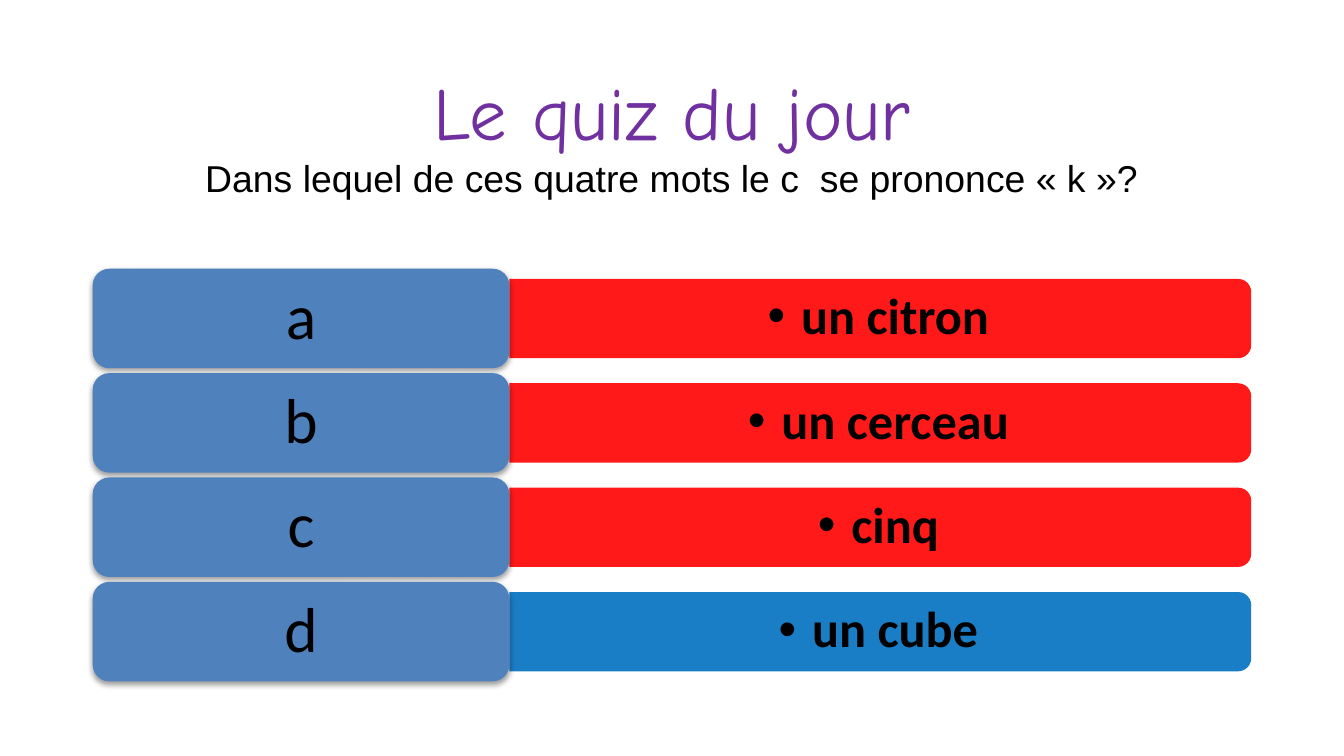
from lxml import etree
from pptx import Presentation
from pptx.dml.color import RGBColor
from pptx.enum.shapes import MSO_SHAPE
from pptx.enum.text import MSO_ANCHOR, PP_ALIGN
from pptx.oxml.ns import qn
from pptx.util import Inches, Pt

ROUND = MSO_SHAPE.ROUNDED_RECTANGLE
TAB = MSO_SHAPE.ROUND_2_SAME_RECTANGLE
MIDDLE = MSO_ANCHOR.MIDDLE
CENTER = PP_ALIGN.CENTER

TITLE = "Le quiz du jour"
QUESTION = "Dans lequel de ces quatre mots le c  se prononce « k »?"
ANSWERS = [
    ("a", "un citron", "wrong"),
    ("b", "un cerceau", "wrong"),
    ("c", "cinq", "wrong"),
    ("d", "un cube", "right"),
]

THEME = {
    "wrong": "FF0000",
    "right": "0070C0",
    "label": "4F81BD",
    "shadow": "000000",
    "bullet": "Arial",
    # text styles: font, size, colour, bold
    "title": ("Comic Neue", 40, "7030A0", False),
    "question": ("Arial", 20, "000000", False),
    "letter": ("Calibri", 34, "000000", False),
    "word": ("Calibri", 27, "000000", True),
}

WIDTH = Inches(10)
HEIGHT = WIDTH * 9 // 16
LEFT, TOP, LAST = 0.69, 2.0, 4.33
STEP = (LAST - TOP) / (len(ANSWERS) - 1)
LABEL_W, LABEL_H = 3.1, 0.74
BAR_W, BAR_H = 5.52, 0.59
PAD = 0.03


def style(run, name):
    font = run.font
    font.name, size, color, font.bold = THEME[name]
    font.size = Pt(size)
    font.color.rgb = RGBColor.from_string(color)


def add_text(slide, box, text, names, inset=(0.1, 0.05)):
    """Add centred text; names gives one style for each line."""
    frame = slide.shapes.add_textbox(*map(Inches, box)).text_frame
    frame.word_wrap = True
    frame.vertical_anchor = MIDDLE
    frame.margin_left = frame.margin_right = Inches(inset[0])
    frame.margin_top = frame.margin_bottom = Inches(inset[1])
    para = frame.paragraphs[0]
    para.text = text
    para.alignment = CENTER
    for run, name in zip(para.runs, names):
        style(run, name)
    return para


def add_block(slide, kind, box, color):
    shape = slide.shapes.add_shape(kind, *map(Inches, box))
    shape.shadow.inherit = False
    shape.fill.solid()
    shape.fill.fore_color.rgb = RGBColor.from_string(color)
    shape.line.fill.background()
    return shape


def set_alpha(color, percent):
    etree.SubElement(color, qn("a:alpha"), val=str(percent * 1000))


def add_shadow(shape):
    effects = shape._element.spPr.find(qn("a:effectLst"))
    outer = etree.SubElement(
        effects, qn("a:outerShdw"), blurRad=str(Pt(3.1)),
        dist=str(Pt(1.6)), dir="5400000", rotWithShape="0")
    color = etree.SubElement(outer, qn("a:srgbClr"), val=THEME["shadow"])
    set_alpha(color, 38)


def add_bullet(para):
    props = para._p.get_or_add_pPr()
    props.set("marL", str(Inches(0.25)))
    props.set("indent", str(Inches(-0.25)))
    etree.SubElement(props, qn("a:buFont"), typeface=THEME["bullet"])
    etree.SubElement(props, qn("a:buChar"), char="•")


def add_answer(slide, top, letter, word, state):
    mid = top + LABEL_H / 2
    start = LEFT + LABEL_W

    # The bar is a tall tab turned a quarter about its centre.
    bar = add_block(
        slide, TAB,
        (start + (BAR_W - BAR_H) / 2, mid - BAR_W / 2, BAR_H, BAR_W),
        THEME[state])
    bar.rotation = 90
    set_alpha(bar._element.spPr.find(".//" + qn("a:srgbClr")), 90)

    para = add_text(
        slide, (start, mid - BAR_H / 2 + PAD, BAR_W - PAD, BAR_H - 2 * PAD),
        word, ["word"], (0.11, 0.06))
    para.level = 1
    para.line_spacing = 0.9
    add_bullet(para)

    add_shadow(add_block(
        slide, ROUND, (LEFT, top, LABEL_W, LABEL_H), THEME["label"]))
    para = add_text(
        slide,
        (LEFT + PAD, top + PAD, LABEL_W - 2 * PAD, LABEL_H - 2 * PAD),
        letter, ["letter"], (0.14, 0.07))
    para.line_spacing = 0.9


def main():
    deck = Presentation()
    deck.slide_width, deck.slide_height = WIDTH, HEIGHT
    slide = deck.slides.add_slide(deck.slide_layouts[6])
    add_text(slide, (LEFT, 0.2, LABEL_W + BAR_W, 1.58),
             TITLE + "\v" + QUESTION, ["title", "question"])
    for row, answer in enumerate(ANSWERS):
        add_answer(slide, TOP + row * STEP, *answer)
    deck.save("out.pptx")


if __name__ == "__main__":
    main()
